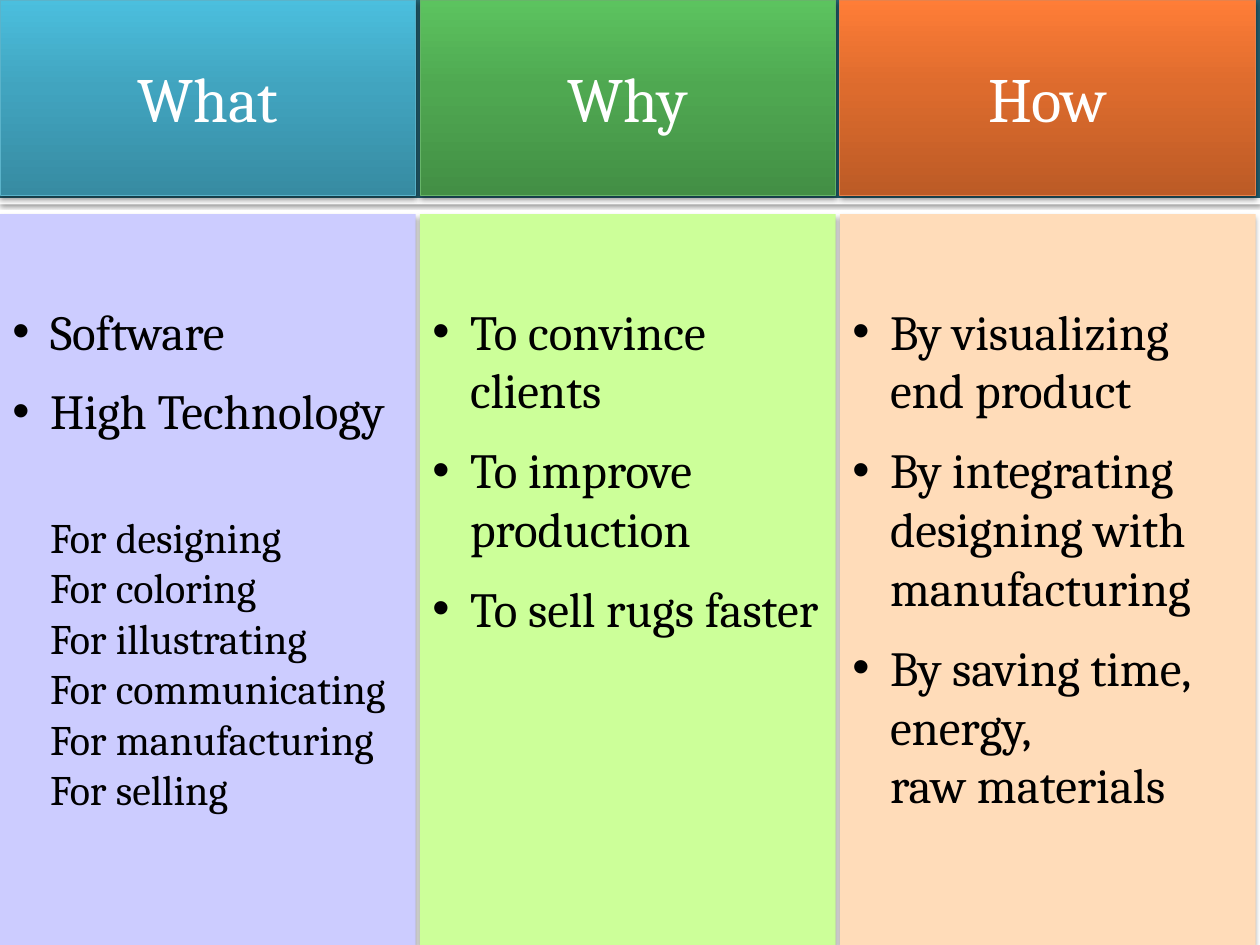
from copy import deepcopy

from lxml import etree
from pptx import Presentation
from pptx.dml.color import RGBColor
from pptx.enum.shapes import MSO_SHAPE
from pptx.enum.text import MSO_ANCHOR, PP_ALIGN
from pptx.oxml.ns import qn
from pptx.util import Cm, Pt

RECT = MSO_SHAPE.RECTANGLE
MIDDLE, TOP = MSO_ANCHOR.MIDDLE, MSO_ANCHOR.TOP
CENTER, LEFT = PP_ALIGN.CENTER, PP_ALIGN.LEFT

COLORS = {
    "white": "FFFFFF", "black": "000000", "band": "246172",
    "what": ("378BA2", "41A4BF", "4BBFDE"), "what_edge": "5BB3CA", "what_body": "CCCCFF",
    "why": ("438F45", "4FA851", "5CC35F"), "why_edge": "67B569", "why_body": "CCFF99",
    "how": ("BC5B26", "DD6B2D", "FF7D37"), "how_edge": "E7824C", "how_body": "FFDCB9",
}
SOFT = {"alpha": 38, "blur": 3.1, "dist": 2}
THIN = {"alpha": 60, "blur": 2.5, "dist": 0.8}
HEAD = {"name": "Cambria", "size": Pt(36)}
ITEM = {"name": "Cambria", "size": Pt(28)}
NOTE = {"name": "Cambria", "size": Pt(24)}

COLUMNS = [
    ("what", "What", ["Software", "High Technology"],
     ["For designing", "For coloring", "For illustrating",
      "For communicating", "For manufacturing", "For selling"]),
    ("why", "Why",
     ["To convince clients", "To improve production", "To sell rugs faster"], []),
    ("how", "How",
     ["By visualizing end product", "By integrating designing with manufacturing",
      "By saving time, energy, \vraw materials"], []),
]


def rgb(name):
    return RGBColor.from_string(COLORS[name])


def apply(target, values):
    for key, value in values.items():
        setattr(target, key, value)


def block(slide, box, fill=None):
    shape = slide.shapes.add_shape(RECT, *(Cm(size) for size in box))
    shape.line.fill.background()
    shape.shadow.inherit = False
    if fill:
        shape.fill.solid()
        shape.fill.fore_color.rgb = rgb(fill)
    return shape


def shade(shape, look):
    effects = shape._element.spPr.find(qn("a:effectLst"))
    outer = etree.SubElement(
        effects, qn("a:outerShdw"), blurRad=str(Pt(look["blur"])),
        dist=str(Pt(look["dist"])), dir="5400000", rotWithShape="0")
    color = etree.SubElement(outer, qn("a:srgbClr"), val=COLORS["black"])
    etree.SubElement(color, qn("a:alpha"), val=str(look["alpha"] * 1000))


def blend(shape, hues):
    shape.fill.gradient()
    shape.fill.gradient_angle = 90
    first = shape._element.spPr.find(".//" + qn("a:gs"))
    first.addnext(deepcopy(first))
    for stop, place, hue in zip(shape.fill.gradient_stops, (0, 0.55, 1), hues):
        stop.position = place
        stop.color.rgb = RGBColor.from_string(hue)


def write(para, text, font, color, layout):
    para.text = text
    apply(para, layout)
    for run in para.runs:
        apply(run.font, font)
        run.font.color.rgb = rgb(color)


def indent(para, bullet):
    props = para._p.get_or_add_pPr()
    props.set("marL", str(Cm(0.76)))
    props.set("indent", str(Cm(-0.76 if bullet else 0)))
    if bullet:
        etree.SubElement(props, qn("a:buFont"), typeface="Arial")
        etree.SubElement(props, qn("a:buChar"), char="•")
    else:
        etree.SubElement(props, qn("a:buNone"))


def header(slide, box, key, title):
    shape = block(slide, box)
    blend(shape, COLORS[key])
    shape.line.color.rgb = rgb(key + "_edge")
    shape.line.width = Pt(0.5)
    shade(shape, SOFT)
    frame = shape.text_frame
    apply(frame, {"word_wrap": True, "vertical_anchor": MIDDLE})
    write(frame.paragraphs[0], title, HEAD, "white", {"alignment": CENTER})


def body(slide, box, key, items, notes):
    shape = block(slide, box, key + "_body")
    shade(shape, SOFT)
    frame = shape.text_frame
    apply(frame, {"word_wrap": True, "vertical_anchor": TOP, "margin_top": Cm(1.75)})
    rows = [(text, ITEM, 12, True) for text in items]
    if notes:
        rows[-1] = (items[-1], ITEM, 41, True)
    rows += [(text, NOTE, 0, False) for text in notes]
    for index, (text, font, after, bullet) in enumerate(rows):
        para = frame.add_paragraph() if index else frame.paragraphs[0]
        write(para, text, font, "black", {"alignment": LEFT, "space_after": Pt(after)})
        indent(para, bullet)


def banner(slide, box):
    left, top, width, height = box
    shade(block(slide, (left, top + height, width, 0.13), "white"), THIN)
    block(slide, box, "band")


def main():
    deck = Presentation()
    apply(deck, {"slide_width": Cm(25.4), "slide_height": Cm(19.05)})
    slide = deck.slides.add_slide(deck.slide_layouts[6])
    banner(slide, (0, 0, 25.4, 3.99))
    step, width = 25.4 / 3, 8.38
    for index, (key, title, items, notes) in enumerate(COLUMNS):
        header(slide, (index * step, 0, width, 3.94), key, title)
        body(slide, (index * step, 4.32, width, 14.73), key, items, notes)
    deck.save("out.pptx")


if __name__ == "__main__":
    main()
